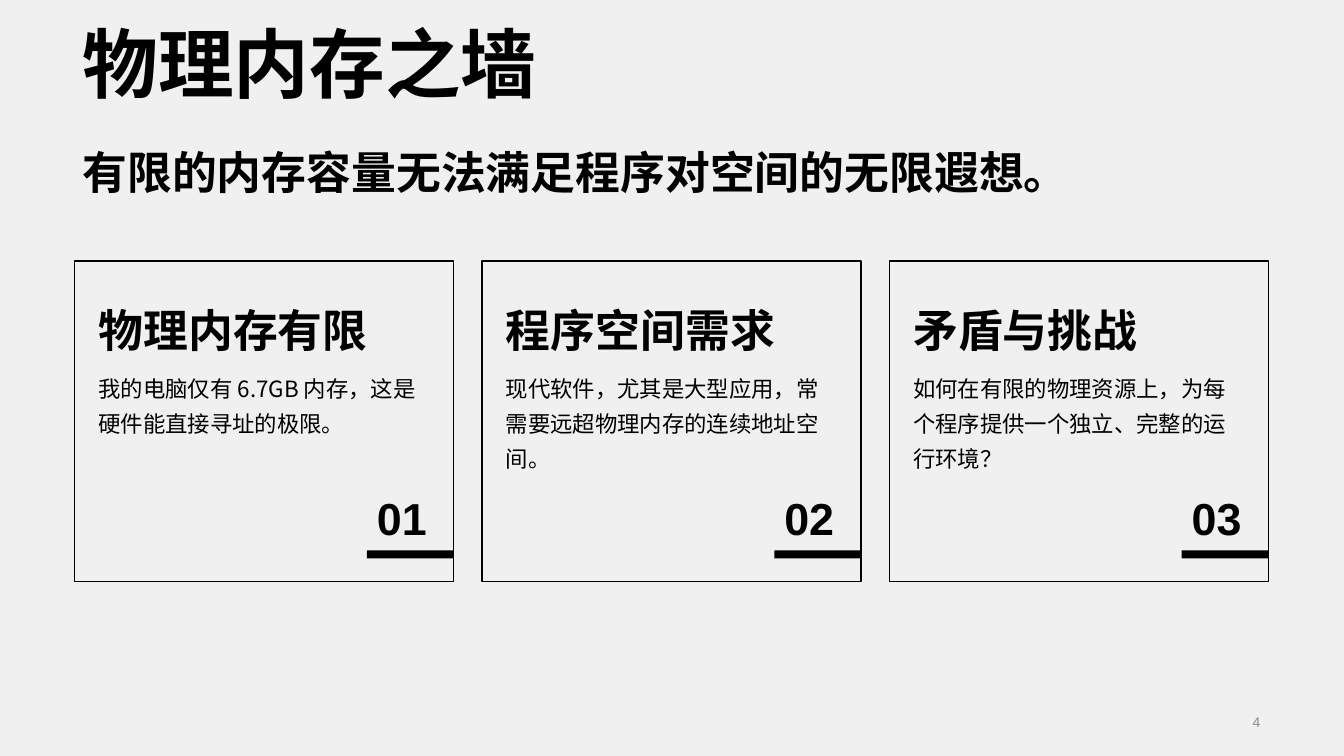
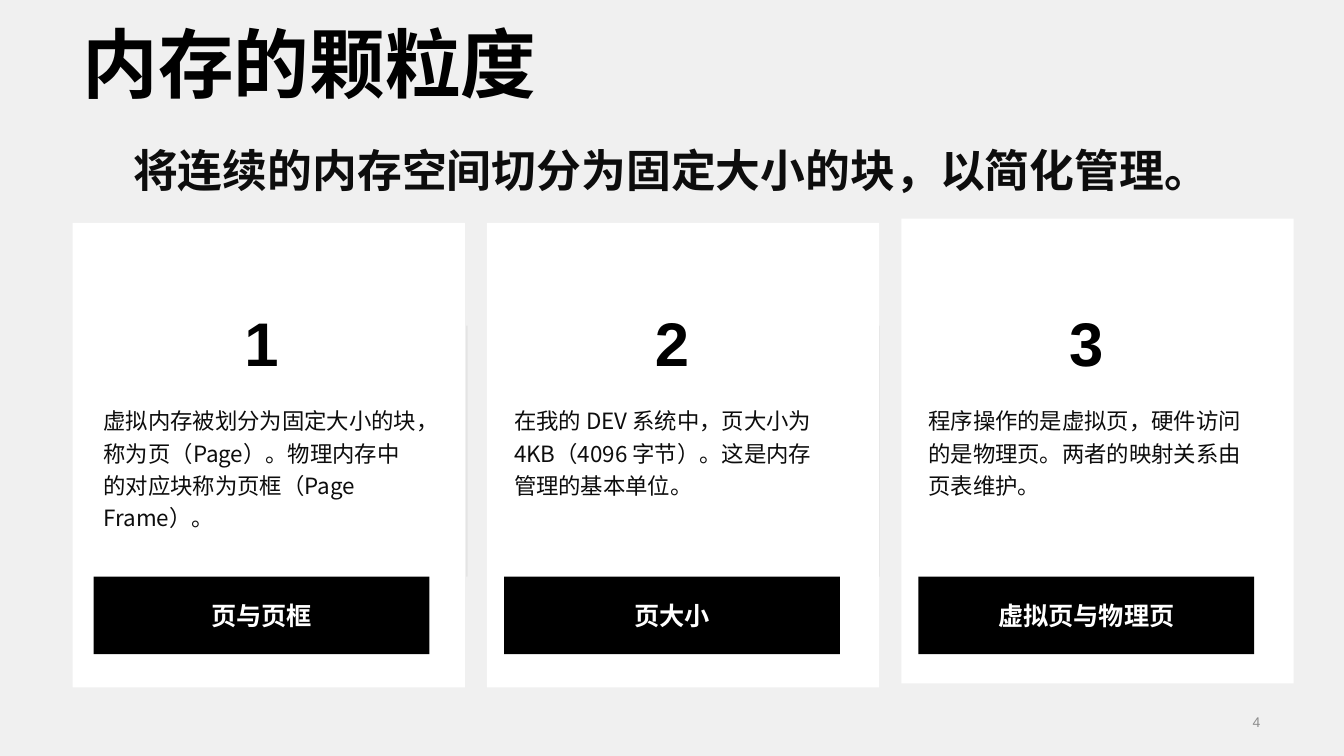
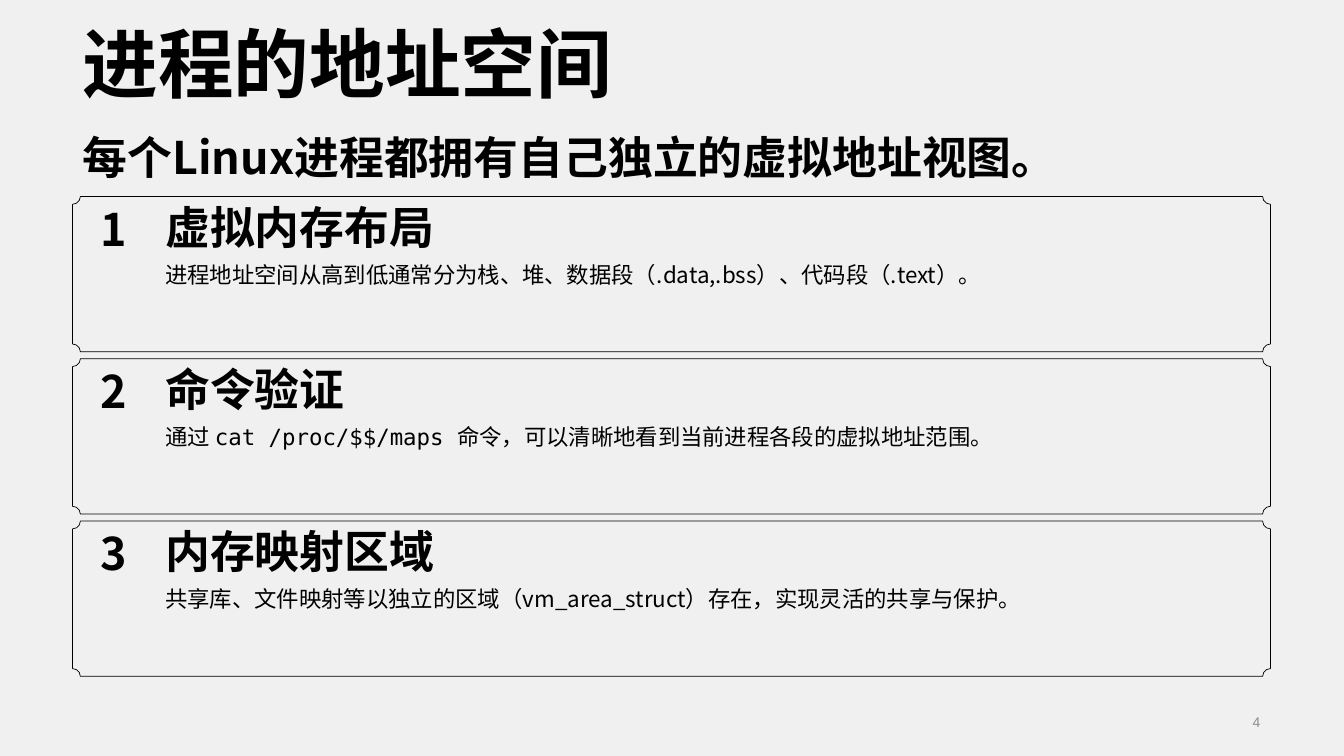
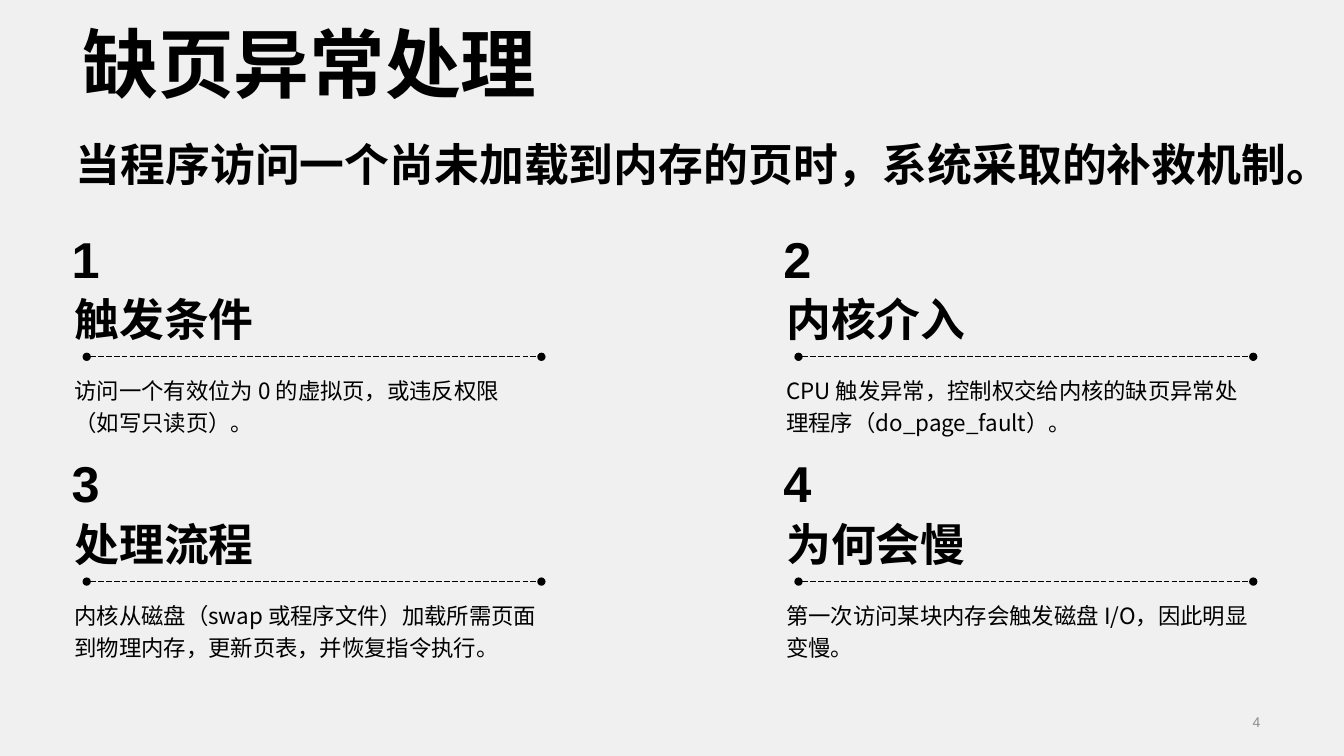
from pptx import Presentation
from pptx.dml.color import RGBColor
from pptx.enum.dml import MSO_LINE
from pptx.enum.shapes import MSO_CONNECTOR, MSO_SHAPE
from pptx.enum.text import MSO_ANCHOR as ANCHOR, PP_ALIGN as ALIGN
from pptx.oxml.ns import qn
from pptx.util import Inches, Pt
from lxml.etree import SubElement

# Shared style
PAPER = RGBColor(0xF0, 0xF0, 0xF0)
BLACK = RGBColor(0, 0, 0)
INK = RGBColor(0x0D, 0x0D, 0x0D)
WHITE = RGBColor(0xFF, 0xFF, 0xFF)
GRAY = RGBColor(0x80, 0x80, 0x80)
PAGE_GRAY = RGBColor(0x8C, 0x8C, 0x8C)
CJK, LATIN, MONO = "Noto Sans CJK SC", "Arial", "DejaVu Sans Mono"
LEFT, WIDTH = 0.72, 11.88
PAGE_NUMBER = "4"

# Content
WALL = {
    "title": "物理内存之墙",
    "lead": "有限的内存容量无法满足程序对空间的无限遐想。",
    "items": [
        ("物理内存有限", "我的电脑仅有 6.7GB 内存，这是硬件能直接寻址的极限。"),
        ("程序空间需求", "现代软件，尤其是大型应用，常需要远超物理内存的连续地址空间。"),
        ("矛盾与挑战", "如何在有限的物理资源上，为每个程序提供一个独立、完整的运行环境？"),
    ],
}
# Each item: card top, content left, label, text
PAGES = {
    "title": "内存的颗粒度",
    "lead": "将连续的内存空间切分为固定大小的块，以简化管理。",
    "items": [
        (2.21, 0.93, "页与页框",
         "虚拟内存被划分为固定大小的块，称为页（Page）。物理内存中的对应块称为页框（Page Frame）。"),
        (2.21, 5.0, "页大小",
         "在我的 DEV 系统中，页大小为4KB（4096 字节）。这是内存管理的基本单位。"),
        (2.17, 9.11, "虚拟页与物理页",
         "程序操作的是虚拟页，硬件访问的是物理页。两者的映射关系由页表维护。"),
    ],
}
# A text is a list of (words, font) runs where fonts differ
SPACE = {
    "title": "进程的地址空间",
    "lead": "每个Linux进程都拥有自己独立的虚拟地址视图。",
    "items": [
        ("虚拟内存布局", "进程地址空间从高到低通常分为栈、堆、数据段（.data,.bss）、代码段（.text）。"),
        ("命令验证", [("通过 ", CJK), ("cat /proc/$$/maps ", MONO),
                  ("命令，可以清晰地看到当前进程各段的虚拟地址范围。", CJK)]),
        ("内存映射区域", "共享库、文件映射等以独立的区域（vm_area_struct）存在，实现灵活的共享与保护。"),
    ],
}
FAULT = {
    "title": "缺页异常处理",
    "lead": "当程序访问一个尚未加载到内存的页时，系统采取的补救机制。",
    "items": [
        ("触发条件", "访问一个有效位为 0 的虚拟页，或违反权限（如写只读页）。"),
        ("内核介入", "CPU 触发异常，控制权交给内核的缺页异常处理程序（do_page_fault）。"),
        ("处理流程", "内核从磁盘（swap 或程序文件）加载所需页面到物理内存，更新页表，并恢复指令执行。"),
        ("为何会慢", "第一次访问某块内存会触发磁盘 I/O，因此明显变慢。"),
    ],
}


def write(tf, text, size, color=BLACK, bold=False, font=CJK, align=ALIGN.LEFT,
          anchor=ANCHOR.TOP, spacing=None, wrap=True):
    tf.word_wrap = wrap
    tf.vertical_anchor = anchor
    p = tf.paragraphs[0]
    p.alignment = align
    if spacing:
        p.line_spacing = spacing
    p.font.size, p.font.bold, p.font.name = Pt(size), bold, font
    p.font.color.rgb = color
    SubElement(p._p.pPr.find(qn("a:defRPr")), qn("a:ea")).set("typeface", font)
    runs = [(text, None)] if isinstance(text, str) else text
    for words, run_font in runs:
        r = p.add_run()
        r.text = words
        if run_font:
            r.font.name = run_font


def add_text(s, box, text, size, **style):
    tf = s.shapes.add_textbox(*map(Inches, box)).text_frame
    write(tf, text, size, **style)
    return tf


def add_heading(s, box, text, anchor=ANCHOR.BOTTOM, **style):
    add_text(s, box, text, 32, bold=True, anchor=anchor, **style)


def add_box(s, box, fill=None, line=None, kind=MSO_SHAPE.RECTANGLE):
    sp = s.shapes.add_shape(kind, *map(Inches, box))
    sp.shadow.inherit = False
    if fill is None:
        sp.fill.background()
    else:
        sp.fill.solid()
        sp.fill.fore_color.rgb = fill
    if line is None:
        sp.line.fill.background()
    else:
        sp.line.color.rgb = BLACK
        sp.line.width = Pt(line)
    return sp


def add_line(s, x1, y1, x2, y2, color, width):
    c = s.shapes.add_connector(MSO_CONNECTOR.STRAIGHT, *map(Inches, (x1, y1, x2, y2)))
    c.line.color.rgb = color
    c.line.width = Pt(width)
    SubElement(c._element.spPr, qn("a:effectLst"))
    return c


def new_slide(prs, title):
    s = prs.slides.add_slide(prs.slide_layouts[6])
    add_text(s, (8.6, 7.01, 4, 0.3), PAGE_NUMBER, 10, color=PAGE_GRAY, font=LATIN,
             align=ALIGN.RIGHT, anchor=ANCHOR.MIDDLE)
    add_text(s, (LEFT, 0.14, WIDTH, 0.98), title, 54, bold=True, anchor=ANCHOR.BOTTOM)
    return s


def wall_slide(prs):
    s = new_slide(prs, WALL["title"])
    add_heading(s, (LEFT, 1.24, WIDTH, 0.92), WALL["lead"], ANCHOR.MIDDLE)
    for i, (head, text) in enumerate(WALL["items"]):
        x = 0.74 + 4.04 * i
        add_box(s, (x, 2.59, 3.76, 3.18), line=1)
        add_heading(s, (x + 0.14, 2.88, 3.45, 0.71), head)
        add_text(s, (x + 0.14, 3.59, 3.48, 1.62), text, 16, spacing=1.3)
        # Number on a bar at the card's right edge
        add_heading(s, (x + 2.9, 4.52, 0.88, 0.93), f"{i + 1:02}", font=LATIN, wrap=False)
        add_box(s, (x + 2.9, 5.46, 0.86, 0.08), fill=BLACK)


def pages_slide(prs):
    s = new_slide(prs, PAGES["title"])
    add_heading(s, (LEFT, 1.37, WIDTH, 0.71), PAGES["lead"], ANCHOR.TOP,
                color=INK, align=ALIGN.CENTER)
    # Faint dividers between the cards
    for x in (4.63, 8.72):
        c = add_line(s, x, 3.23, x, 5.72, GRAY, 1)
        rgb = c.line._ln.find(".//" + qn("a:srgbClr"))
        SubElement(rgb, qn("a:alpha")).set("val", "10000")
    for i, (top, x, label, text) in enumerate(PAGES["items"]):
        add_box(s, (LEFT + 4.11 * i, top, 3.89, 4.61), fill=WHITE)
        add_text(s, (x, 2.99, 3.33, 0.82), str(i + 1), 44, bold=True, font=LATIN,
                 align=ALIGN.CENTER, anchor=ANCHOR.BOTTOM)
        add_text(s, (x, 3.94, 3.33, 1.67), text, 16, color=INK, spacing=1.2)
        band = add_box(s, (x, 5.72, 3.33, 0.77), fill=BLACK)
        write(band.text_frame, label, 18, color=WHITE, bold=True,
              align=ALIGN.CENTER, anchor=ANCHOR.MIDDLE)


def space_slide(prs):
    s = new_slide(prs, SPACE["title"])
    add_heading(s, (LEFT, 1.24, WIDTH, 0.62), SPACE["lead"], ANCHOR.MIDDLE)
    for i, (head, text) in enumerate(SPACE["items"]):
        y = 1.95 + 1.61 * i
        plaque = add_box(s, (LEFT, y, WIDTH, 1.54), line=0.5, kind=MSO_SHAPE.PLAQUE)
        plaque.adjustments[0] = 0.05
        add_heading(s, (0.81, y + 0.08, 0.63, 0.43), str(i + 1), ANCHOR.MIDDLE,
                    align=ALIGN.CENTER, spacing=1.08, wrap=False)
        add_heading(s, (1.54, y + 0.08, 10.91, 0.43), head, ANCHOR.MIDDLE)
        add_text(s, (1.54, y + 0.51, 10.91, 0.94), text, 16, spacing=1.3)


def fault_slide(prs):
    s = new_slide(prs, FAULT["title"])
    add_heading(s, (0.64, 1.24, 12.24, 0.76), FAULT["lead"], ANCHOR.MIDDLE,
                align=ALIGN.CENTER)
    for i, (head, text) in enumerate(FAULT["items"]):
        row, col = divmod(i, 2)
        x, y = 0.64 + 7.06 * col, 2.28 + 2.23 * row
        tf = add_text(s, (x, y, 4.81, 0.62), str(i + 1), 36, bold=True, font=LATIN,
                      anchor=ANCHOR.BOTTOM, wrap=False)
        tf.margin_left = tf.margin_right = Inches(0.07)
        tf.margin_top = tf.margin_bottom = Inches(0.04)
        add_heading(s, (x, y + 0.63, 4.81, 0.57), head)
        # Dashed rule with round ends
        c = add_line(s, x + 0.22, y + 1.26, x + 4.73, y + 1.26, BLACK, 0.5)
        c.line.dash_style = MSO_LINE.LONG_DASH
        for end in ("a:headEnd", "a:tailEnd"):
            SubElement(c.line._ln, qn(end)).set("type", "oval")
        add_text(s, (x, y + 1.36, 4.81, 0.82), text, 16, spacing=1.2)


def main():
    prs = Presentation()
    prs.slide_width, prs.slide_height = Inches(13.33), Inches(7.5)
    fill = prs.slide_master.background.fill
    fill.solid()
    fill.fore_color.rgb = PAPER
    for build in (wall_slide, pages_slide, space_slide, fault_slide):
        build(prs)
    prs.save("out.pptx")


if __name__ == "__main__":
    main()
